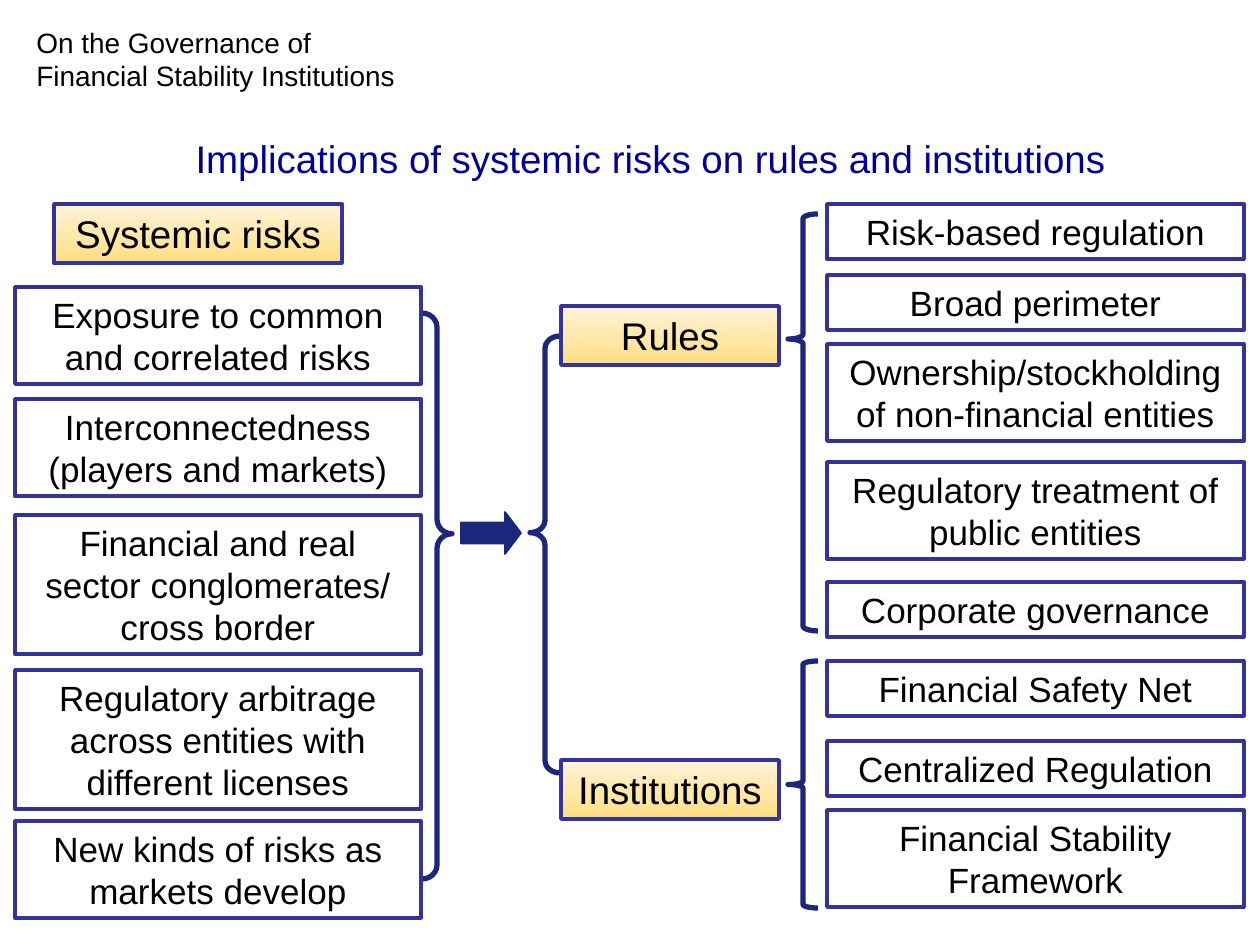
"""Build the slide on how systemic risks shape rules and institutions."""
from pptx import Presentation
from pptx.dml.color import RGBColor
from pptx.enum.shapes import MSO_SHAPE as Shape
from pptx.enum.text import MSO_ANCHOR as Anchor, MSO_AUTO_SIZE as AutoSize, PP_ALIGN as Align
from pptx.util import Pt

PX = 914400 / 126
BLACK = RGBColor(0x00, 0x00, 0x00)
TITLE_BLUE = RGBColor(0x00, 0x00, 0x99)
BORDER = RGBColor(0x33, 0x33, 0x99)
NAVY = RGBColor(0x1C, 0x26, 0x7D)
GOLD = RGBColor(0xFF, 0xDE, 0x80)
CREAM = RGBColor(0xFF, 0xF3, 0xDA)

TITLE = "Implications of systemic risks on rules and institutions"
HEADER = "On the Governance of Financial Stability Institutions"
HEADINGS = [
    ("Systemic risks", 54, 204, 288),
    ("Rules", 561, 306, 218),
    ("Institutions", 561, 760, 218),
]
RISKS = [
    ("Exposure to common and correlated risks", 287, 2),
    ("Interconnectedness (players and markets)", 399, 2),
    ("Financial and real sector conglomerates/ cross border", 515, 3),
    ("Regulatory arbitrage across entities with different licenses", 670, 3),
    ("New kinds of risks as markets develop", 821, 2),
]
MEASURES = [
    ("Risk-based regulation", 204, 1),
    ("Broad perimeter", 275, 1),
    ("Ownership/stockholding of non-financial entities", 344, 2),
    ("Regulatory treatment of public entities", 462, 2),
    ("Corporate governance", 582, 1),
    ("Financial Safety Net", 661, 1),
    ("Centralized Regulation", 741, 1),
    ("Financial Stability Framework", 810, 2),
]
COLUMNS = [(RISKS, 15, 406), (MEASURES, 827, 417)]
BRACES = [
    (422, 313, 566, 0.48, 0.61, 180),
    (530, 336, 437, 0.41, 0.45, 0),
    (788, 214, 417, 0.16, 0.3, 0),
    (788, 661, 247, 0.12, 0.5, 0),
]
BRACE_WIDTH = 30
HEADING_HEIGHT = 59
LINE_HEIGHT, BOX_PADDING = 42, 13


def px(*lengths):
    return [round(length * PX) for length in lengths]


def write(frame, text, size, color, align):
    frame.word_wrap = True
    frame.text = text
    para = frame.paragraphs[0]
    para.alignment = align
    font = para.runs[0].font
    font.name, font.size, font.color.rgb = "Arial", Pt(size), color


def add_shape(slide, kind, area, line_color, line_width):
    shape = slide.shapes.add_shape(kind, *px(*area))
    shape.shadow.inherit = False
    shape.fill.background()
    shape.line.color.rgb = line_color
    shape.line.width = Pt(line_width)
    return shape


def add_box(slide, text, area, size):
    box = add_shape(slide, Shape.RECTANGLE, area, BORDER, 2)
    write(box.text_frame, text, size, BLACK, Align.CENTER)
    box.text_frame.auto_size = AutoSize.SHAPE_TO_FIT_TEXT
    return box


def add_heading(slide, text, left, top, width):
    box = add_box(slide, text, (left, top, width, HEADING_HEIGHT), 22)
    box.fill.gradient()
    box.fill.gradient_angle = 90
    for stop, color in zip(box.fill.gradient_stops, (GOLD, CREAM)):
        stop.color.rgb = color


def add_brace(slide, left, top, height, curve, tip, rotation):
    area = (left, top, BRACE_WIDTH, height)
    brace = add_shape(slide, Shape.LEFT_BRACE, area, NAVY, 3)
    brace.adjustments[0], brace.adjustments[1] = curve, tip
    brace.rotation = rotation


def main():
    deck = Presentation()
    deck.slide_width, deck.slide_height = px(1260, 945)
    slide = deck.slides.add_slide(deck.slide_layouts[5])

    title = slide.shapes.title
    title.left, title.top, title.width, title.height = px(115, 126, 1071, 68)
    write(title.text_frame, TITLE, 22, TITLE_BLUE, Align.CENTER)
    title.text_frame.vertical_anchor = Anchor.BOTTOM
    title.text_frame.margin_bottom = px(13)[0]

    header = slide.shapes.add_textbox(*px(24, 19, 410, 81))
    write(header.text_frame, HEADER, 16, BLACK, Align.LEFT)

    for brace in BRACES:
        add_brace(slide, *brace)
    arrow = add_shape(slide, Shape.RIGHT_ARROW, (461, 512, 60, 42), NAVY, 1)
    arrow.fill.solid()
    arrow.fill.fore_color.rgb = NAVY
    arrow.adjustments[1] = 0.38

    for heading in HEADINGS:
        add_heading(slide, *heading)
    for entries, left, width in COLUMNS:
        for text, top, lines in entries:
            height = lines * LINE_HEIGHT + BOX_PADDING
            add_box(slide, text, (left, top, width, height), 20)

    deck.save("out.pptx")


if __name__ == "__main__":
    main()
